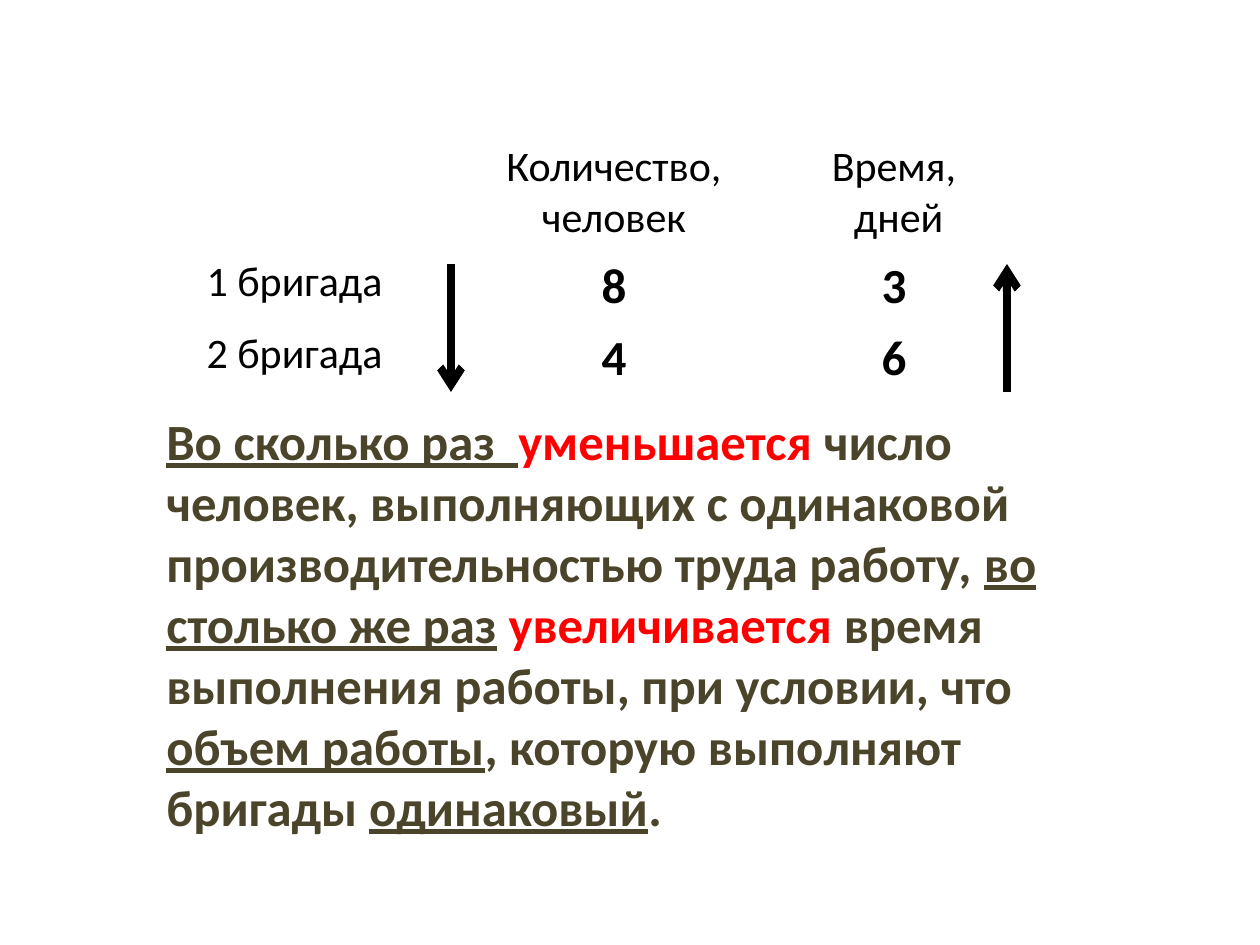
from pptx import Presentation
from pptx.dml.color import RGBColor
from pptx.enum.shapes import MSO_CONNECTOR as Connector
from pptx.enum.text import MSO_AUTO_SIZE as AutoSize, PP_ALIGN as Align
from pptx.oxml.ns import qn
from pptx.util import Pt
from lxml.etree import SubElement

PX = 914400 // 126
BLACK, RED, OLIVE = "000000", "FF0000", "4A452A"
BRIGADES = [
    ["", "Количество, человек", "Время,\n дней"],
    ["1 бригада", "8", "3"],
    ["2 бригада", "4", "6"],
]
RULE = [
    ("Во сколько раз  ", OLIVE, True),
    ("уменьшается ", RED, False),
    ("число человек, выполняющих с одинаковой производительностью труда работу, ", OLIVE, False),
    ("во столько же раз", OLIVE, True),
    (" ", OLIVE, False),
    ("увеличивается ", RED, False),
    ("время выполнения работы, при условии, что ", OLIVE, False),
    ("объем работы", OLIVE, True),
    (", которую выполняют бригады ", OLIVE, False),
    ("одинаковый", OLIVE, True),
    (".", OLIVE, False),
]


def px(*lengths):
    """Turn pixel lengths into EMU."""
    return [length * PX for length in lengths]


def style(font, size, color, bold=False, underline=False):
    """Format a font in the slide's typeface."""
    font.name, font.size = "Calibri", Pt(size)
    font.bold, font.underline = bold, underline
    font.color.rgb = RGBColor.from_string(color)


def add_brigades(slide, left, top, width, row_heights):
    """Place the table of brigades, people and days."""
    box = px(left, top, width, sum(row_heights))
    table = slide.shapes.add_table(len(BRIGADES), len(BRIGADES[0]), *box).table
    table.first_row = table.horz_banding = False
    for row, height in zip(table.rows, row_heights):
        row.height = height * PX
    for r, texts in enumerate(BRIGADES):
        for c, text in enumerate(texts):
            cell = table.cell(r, c)
            cell.fill.background()
            cell.text_frame.text = text
            is_value = r > 0 and c > 0
            for paragraph in cell.text_frame.paragraphs:
                paragraph.alignment = Align.CENTER if c else Align.LEFT
                for run in paragraph.runs:
                    style(run.font, 28 if is_value else 24, BLACK, bold=is_value)


def add_trend(slide, x, tail, tip):
    """Draw a vertical arrow from tail to tip."""
    trend = slide.shapes.add_connector(Connector.STRAIGHT, *px(x, tail, x, tip))
    trend.line.width = Pt(4.5)
    trend.line.color.rgb = RGBColor.from_string(BLACK)
    SubElement(trend.line._get_or_add_ln(), qn("a:tailEnd"), type="arrow")
    SubElement(trend._element.spPr, qn("a:effectLst"))


def add_rule(slide, left, top, width, height):
    """Place the statement of inverse proportion."""
    frame = slide.shapes.add_textbox(*px(left, top, width, height)).text_frame
    frame.word_wrap = True
    frame.auto_size = AutoSize.SHAPE_TO_FIT_TEXT
    for text, color, underline in RULE:
        run = frame.paragraphs[0].add_run()
        run.text = text
        style(run.font, 29, color, bold=True, underline=underline)


def main():
    """Build and save the slide."""
    deck = Presentation()
    deck.slide_width, deck.slide_height = px(1260, 945)
    slide = deck.slides.add_slide(deck.slide_layouts[6])
    add_brigades(slide, 194, 135, 840, [115, 72, 72])
    add_trend(slide, 451, 264, 392)
    add_trend(slide, 1007, 392, 264)
    add_rule(slide, 154, 404, 932, 443)
    deck.save("out.pptx")


if __name__ == "__main__":
    main()
